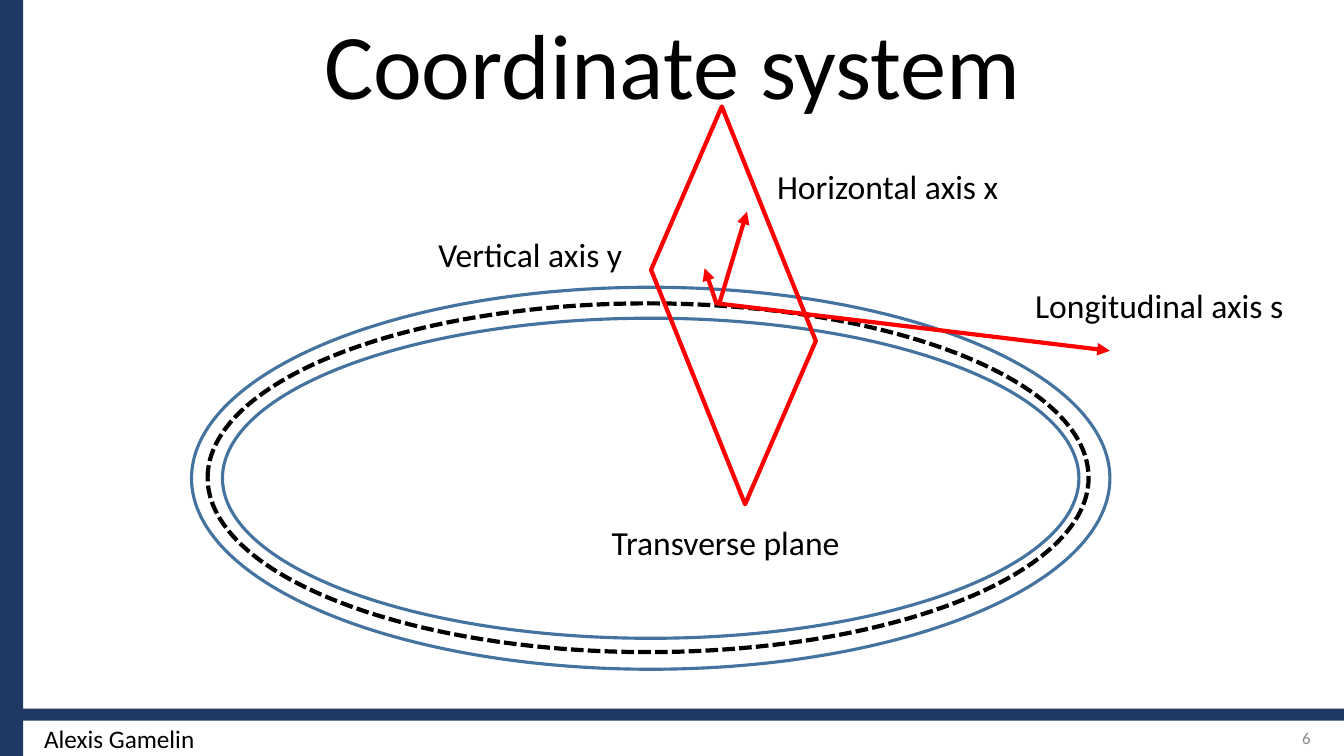
import pptx
import pptx.util
import pptx.dml.color
import pptx.enum.dml
import pptx.enum.shapes
import pptx.enum.text
import pptx.oxml
import pptx.oxml.ns

Pt = pptx.util.Pt
RGB = pptx.dml.color.RGBColor
SHAPE = pptx.enum.shapes.MSO_SHAPE
ALIGN = pptx.enum.text.PP_ALIGN
ANCHOR = pptx.enum.text.MSO_ANCHOR

NAVY = RGB(0x20, 0x38, 0x64)
BLUE = RGB(0x43, 0x73, 0x9E)
RED = RGB(0xFF, 0x00, 0x00)
BLACK = RGB(0x00, 0x00, 0x00)
GRAY = RGB(0x8C, 0x8C, 0x8C)

deck = pptx.Presentation()
deck.slide_width = pptx.util.Inches(13.33)
deck.slide_height = pptx.util.Inches(7.5)
slide = deck.slides.add_slide(deck.slide_layouts[6])

# All places and sizes are percent of the slide's width and height
COL = deck.slide_width / 100
ROW = deck.slide_height / 100


def add_form(kind, x, y, w, h, fill=None, line=None, width=0):
    form = slide.shapes.add_shape(
        kind, round(x * COL), round(y * ROW), round(w * COL), round(h * ROW))
    form.shadow.inherit = False
    if fill is None:
        form.fill.background()
    else:
        form.fill.solid()
        form.fill.fore_color.rgb = fill
    if line is None:
        form.line.fill.background()
    else:
        form.line.color.rgb = line
        form.line.width = Pt(width)
    return form


def add_text(text, x, y, w, h, size, color=BLACK, align=ALIGN.LEFT, anchor=ANCHOR.TOP):
    box = slide.shapes.add_textbox(
        round(x * COL), round(y * ROW), round(w * COL), round(h * ROW))
    frame = box.text_frame
    frame.word_wrap = True
    frame.vertical_anchor = anchor
    frame.text = text
    para = frame.paragraphs[0]
    para.alignment = align
    font = para.runs[0].font
    font.name = "Calibri"
    font.size = Pt(size)
    font.color.rgb = color
    return para


# Frame bars and footer
add_form(SHAPE.RECTANGLE, 0, 93.73, 100, 1.6, fill=NAVY)
add_form(SHAPE.RECTANGLE, 0, 0, 1.73, 100, fill=NAVY)
add_text("6", 75.75, 94.93, 22.5, 5.33, 12, GRAY, ALIGN.RIGHT, ANCHOR.MIDDLE)
add_text("Alexis Gamelin", 2.55, 95.07, 26.93, 5.33, 18)

# Title
title = add_text("Coordinate system", 2.78, 3.87, 94.5, 12.53, 66,
                 align=ALIGN.CENTER, anchor=ANCHOR.BOTTOM)
title.line_spacing = 0.9

# Beam pipe and its dashed orbit
pipe = add_form(SHAPE.DONUT, 14.25, 38, 68.33, 50.53, line=BLUE, width=2.25)
pipe.adjustments[0] = 0.081
orbit = add_form(SHAPE.OVAL, 15.45, 40.13, 65.55, 46.13, line=BLACK, width=3)
orbit.line.dash_style = pptx.enum.dml.MSO_LINE.SQUARE_DOT

# Transverse plane
plane = add_form(SHAPE.PARALLELOGRAM, 41.33, 28.53, 26.48, 23.73, line=RED, width=3)
plane.adjustments[0] = 0.991
plane.rotation = 293.4

# Axis arrows: s, x, y
axes = [
    (53.33, 40.13, 82.58, 46.4),
    (53.48, 40.4, 55.58, 28),
    (53.33, 40.27, 52.43, 35.47),
]
for x1, y1, x2, y2 in axes:
    axis = slide.shapes.add_connector(
        pptx.enum.shapes.MSO_CONNECTOR.STRAIGHT,
        round(x1 * COL), round(y1 * ROW), round(x2 * COL), round(y2 * ROW))
    axis.line.color.rgb = RED
    axis.line.width = Pt(3)
    head = pptx.oxml.parse_xml(
        '<a:tailEnd %s type="triangle"/>' % pptx.oxml.ns.nsdecls("a"))
    axis.line._get_or_add_ln().append(head)
    props = axis._element.spPr
    props.append(pptx.oxml.parse_xml(
        "<a:effectLst %s/>" % pptx.oxml.ns.nsdecls("a")))

# Labels
labels = [
    ("Longitudinal axis s", 76.28, 37.07),
    ("Transverse plane", 44.78, 68.4),
    ("Horizontal axis x", 57.08, 21.33),
    ("Vertical axis y", 31.88, 30.27),
]
for text, x, y in labels:
    add_text(text, x, y, 21.68, 6.67, 24)

deck.save("out.pptx")
